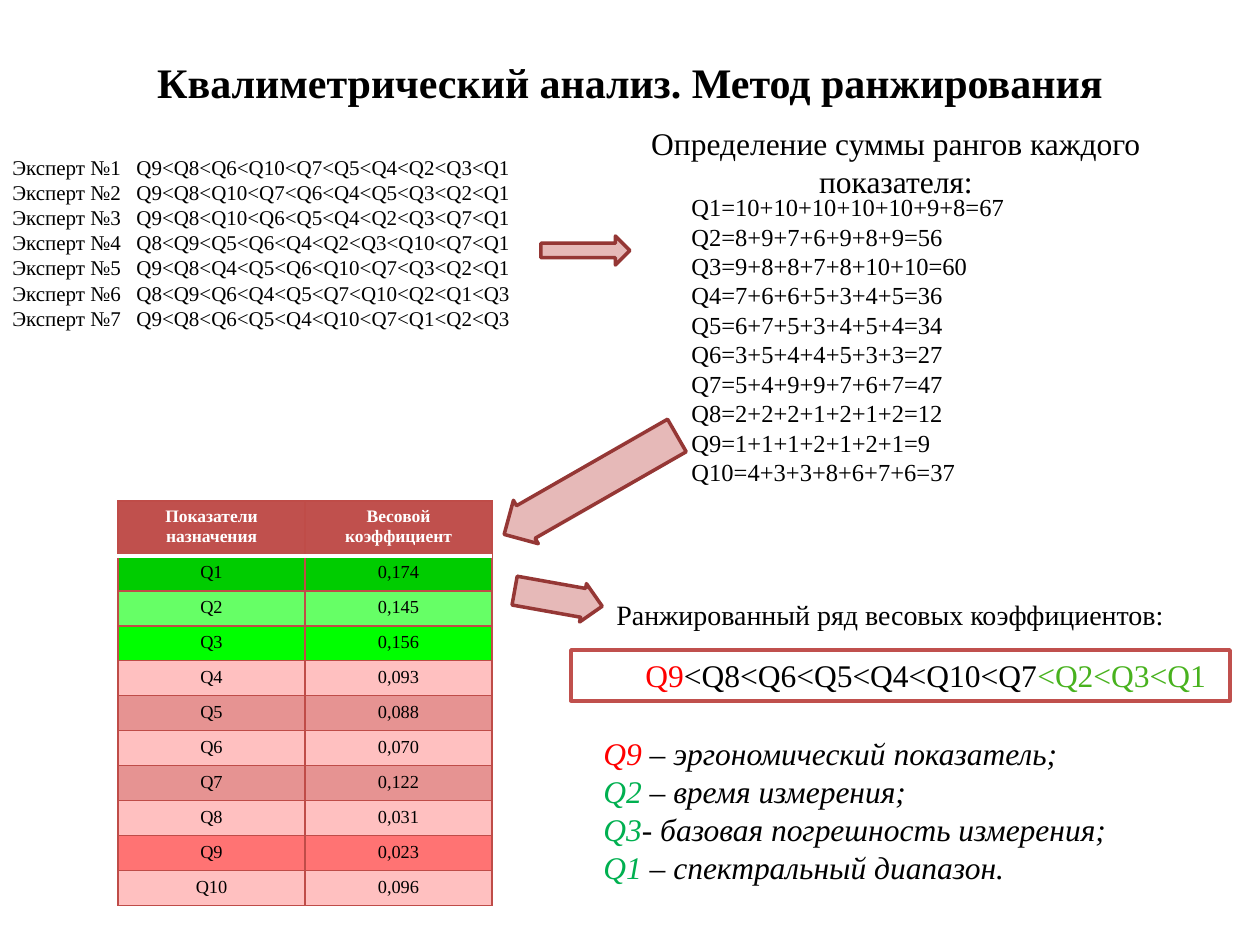
from lxml.etree import SubElement
from pptx import Presentation
from pptx.dml.color import RGBColor
from pptx.enum.shapes import MSO_SHAPE as Shape
from pptx.enum.text import MSO_ANCHOR as Anchor, MSO_AUTO_SIZE as AutoSize, PP_ALIGN as Align
from pptx.oxml.ns import qn
from pptx.util import Pt

PX = 914400 / 126
FONT = "Times New Roman"
BLACK, WHITE, RED, GREEN, LIME = "000000", "FFFFFF", "FF0000", "00B050", "48B21E"
ACCENT, BORDER = "C0504D", "BF4C48"
ARROW_FILL, ARROW_LINE = "E6B9B8", "953735"
PALE, MEDIUM = "FFC0C0", "E69392"

EXPERTS = [
    "Q9<Q8<Q6<Q10<Q7<Q5<Q4<Q2<Q3<Q1",
    "Q9<Q8<Q10<Q7<Q6<Q4<Q5<Q3<Q2<Q1",
    "Q9<Q8<Q10<Q6<Q5<Q4<Q2<Q3<Q7<Q1",
    "Q8<Q9<Q5<Q6<Q4<Q2<Q3<Q10<Q7<Q1",
    "Q9<Q8<Q4<Q5<Q6<Q10<Q7<Q3<Q2<Q1",
    "Q8<Q9<Q6<Q4<Q5<Q7<Q10<Q2<Q1<Q3",
    "Q9<Q8<Q6<Q5<Q4<Q10<Q7<Q1<Q2<Q3",
]
RANK_SUMS = [
    "10+10+10+10+10+9+8=67", "8+9+7+6+9+8+9=56", "9+8+8+7+8+10+10=60",
    "7+6+6+5+3+4+5=36", "6+7+5+3+4+5+4=34", "3+5+4+4+5+3+3=27",
    "5+4+9+9+7+6+7=47", "2+2+2+1+2+1+2=12", "1+1+1+2+1+2+1=9",
    "4+3+3+8+6+7+6=37",
]
WEIGHTS = [
    ("0,174", "00CC00"), ("0,145", "66FF66"), ("0,156", "00FF00"), ("0,093", PALE),
    ("0,088", MEDIUM), ("0,070", PALE), ("0,122", MEDIUM), ("0,031", PALE),
    ("0,023", "FF7373"), ("0,096", PALE),
]
LEGEND = [
    ("Q9", RED, " – эргономический показатель;"),
    ("Q2", GREEN, " – время измерения;"),
    ("Q3", GREEN, "- базовая погрешность измерения;"),
    ("Q1", GREEN, " – спектральный диапазон."),
]


def px(length):
    return round(length * PX)


def color(value):
    return RGBColor.from_string(value)


def place(shape, box):
    shape.left, shape.top, shape.width, shape.height = map(px, box)


def fill_paragraph(paragraph, runs, size, align=Align.LEFT, indent=0, tab=0,
                   bold=False, italic=False):
    paragraph.alignment = align
    properties = paragraph._p.get_or_add_pPr()
    if indent:
        properties.set("indent", str(px(indent)))
    if tab:
        tabs = SubElement(properties, qn("a:tabLst"))
        SubElement(tabs, qn("a:tab"), pos=str(px(tab)), algn="l")
    for text, run_color in runs:
        run = paragraph.add_run()
        run.text = text
        font = run.font
        font.name, font.size, font.bold, font.italic = FONT, Pt(size), bold, italic
        font.color.rgb = color(run_color)


def fill_frame(frame, paragraphs, size, anchor=Anchor.TOP, **style):
    frame.word_wrap = True
    frame.auto_size = AutoSize.NONE
    frame.vertical_anchor = anchor
    for index, runs in enumerate(paragraphs):
        paragraph = frame.add_paragraph() if index else frame.paragraphs[0]
        fill_paragraph(paragraph, runs, size, **style)


def add_text(slide, box, paragraphs, size, **style):
    shape = slide.shapes.add_textbox(*map(px, box))
    fill_frame(shape.text_frame, paragraphs, size, **style)


def add_block(slide, kind, box, fill, line):
    shape = slide.shapes.add_shape(kind, *map(px, box))
    shape.shadow.inherit = False
    shape.fill.solid()
    shape.fill.fore_color.rgb = color(fill)
    shape.line.color.rgb = color(line)
    shape.line.width = Pt(2)
    return shape


def add_arrow(slide, box, rotation=0, thickness=0.5):
    arrow = add_block(slide, Shape.RIGHT_ARROW, box, ARROW_FILL, ARROW_LINE)
    arrow.adjustments[0] = thickness
    arrow.rotation = rotation


def add_title(slide, box):
    title = slide.shapes.title
    place(title, box)
    fill_frame(title.text_frame, [[("Квалиметрический анализ. Метод ранжирования", BLACK)]],
               24, anchor=Anchor.MIDDLE, align=Align.CENTER, bold=True)


def add_experts(slide, box):
    lines = [[(f"Эксперт №{number}\t{order}", BLACK)]
             for number, order in enumerate(EXPERTS, 1)]
    add_text(slide, box, lines, 12, tab=124)


def add_rank_sums(slide, box):
    left, top, width, height = box
    add_text(slide, (left, top, width, 90),
             [[("Определение суммы рангов каждого показателя:", BLACK)]],
             18, align=Align.CENTER)
    lines = [[(f"Q{number}={total}", BLACK)] for number, total in enumerate(RANK_SUMS, 1)]
    add_text(slide, (left + 49, top + 68, 394, height - 68), lines, 14)


def style_cell(cell, text, size, text_color, fill, top, bottom, bold):
    fill_paragraph(cell.text_frame.paragraphs[0], [(text, text_color)], size,
                   align=Align.CENTER, bold=bold)
    properties = cell._tc.get_or_add_tcPr()
    side = (BORDER, 0.75)
    for tag, (line_color, width) in zip(("lnL", "lnR", "lnT", "lnB"), (side, side, top, bottom)):
        line = SubElement(properties, qn(f"a:{tag}"), w=str(Pt(width)))
        SubElement(SubElement(line, qn("a:solidFill")), qn("a:srgbClr"), val=line_color)
    cell.fill.solid()
    cell.fill.fore_color.rgb = color(fill)


def add_weights(slide, box):
    header_height = 55
    rows = [("Показатели назначения", "Весовой коэффициент", ACCENT)]
    rows += [(f"Q{number}", weight, fill) for number, (weight, fill) in enumerate(WEIGHTS, 1)]
    table = slide.shapes.add_table(len(rows), 2, *map(px, box)).table
    for column in table.columns:
        column.width = px(box[2] / 2)
    thin, divider = (BORDER, 0.75), (WHITE, 2)
    for index, (*texts, fill) in enumerate(rows):
        header = index == 0
        table.rows[index].height = px(
            header_height if header else (box[3] - header_height) / len(WEIGHTS))
        for column, text in enumerate(texts):
            style_cell(table.cell(index, column), text, 10 if header else 10.5,
                       WHITE if header else BLACK, fill,
                       divider if index == 1 else thin, divider if header else thin, header)


def add_ranking(slide, box):
    left, top, width, height = box
    add_text(slide, (left, top, 679, 47),
             [[("Ранжированный ряд весовых коэффициентов:", BLACK)]],
             16, anchor=Anchor.MIDDLE, align=Align.JUSTIFY, indent=62)
    frame = add_block(slide, Shape.RECTANGLE, (left + 29, top + 59, width - 29, 51),
                      WHITE, ACCENT)
    series = [("Q9", RED), ("<Q8<Q6<Q5<Q4<Q10<Q7", BLACK), ("<Q2<Q3<Q1", LIME)]
    fill_frame(frame.text_frame, [series], 18, align=Align.JUSTIFY, indent=62)
    lines = [[(name, name_color), (meaning, BLACK)] for name, name_color, meaning in LEGEND]
    add_text(slide, (left + 49, top + 137, 591, height - 137), lines, 18, italic=True)


def main():
    presentation = Presentation()
    presentation.slide_width, presentation.slide_height = px(1260), px(945)
    slide = presentation.slides.add_slide(presentation.slide_layouts[5])
    add_title(slide, (0, 50, 1260, 63))
    add_experts(slide, (0, 148, 561, 190))
    add_rank_sums(slide, (630, 118, 532, 378))
    add_weights(slide, (118, 501, 374, 405))
    add_ranking(slide, (542, 591, 688, 302))
    add_arrow(slide, (541, 236, 89, 29))
    add_arrow(slide, (514, 579, 89, 39), 10.1, 0.75)
    add_arrow(slide, (491, 460, 199, 50), 150.2, 0.75)
    presentation.save("out.pptx")


if __name__ == "__main__":
    main()
